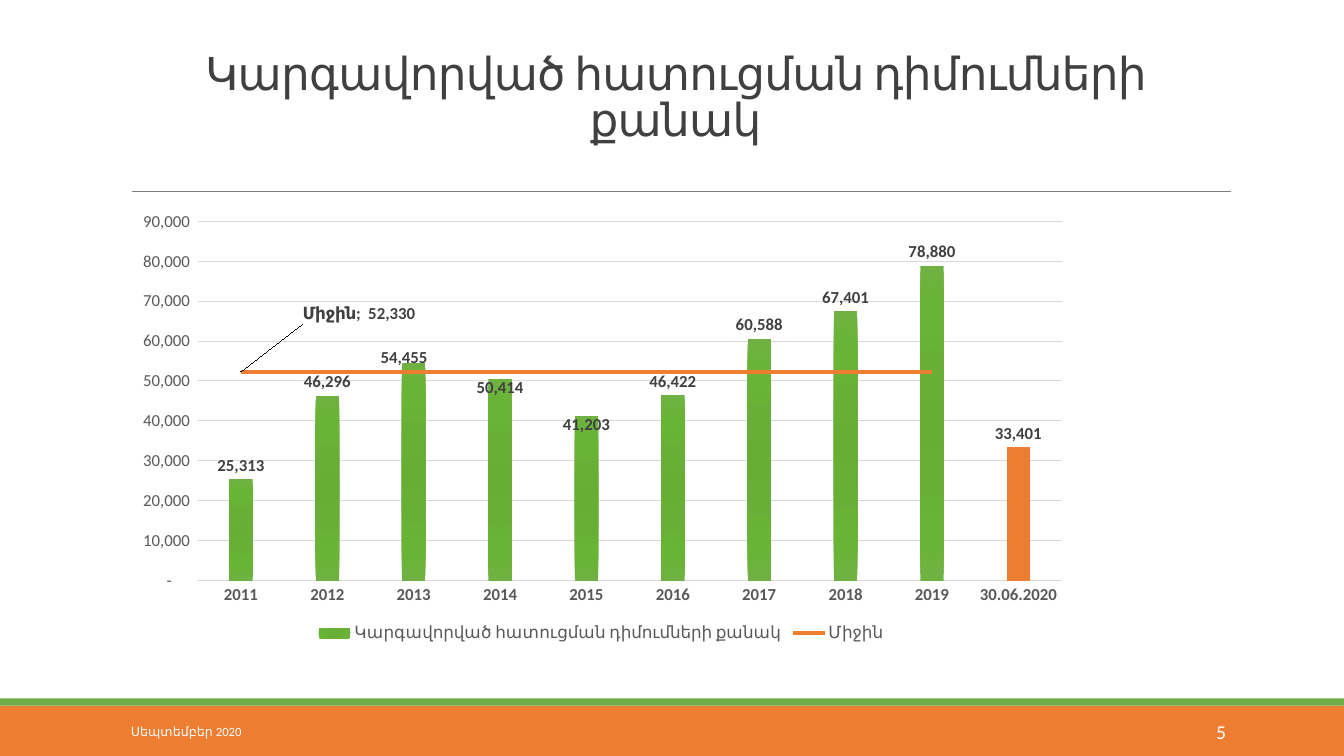
from pptx import Presentation
from pptx.chart.data import CategoryChartData
from pptx.dml.color import RGBColor
from pptx.enum.chart import XL_CHART_TYPE as ChartType, XL_LABEL_POSITION as LabelPos
from pptx.enum.chart import XL_LEGEND_POSITION as LegendPos, XL_MARKER_STYLE as Marker
from pptx.enum.chart import XL_TICK_MARK as Tick
from pptx.enum.shapes import MSO_CONNECTOR as Connector, MSO_SHAPE as Shape
from pptx.enum.text import MSO_ANCHOR as Anchor, PP_ALIGN as Align
from pptx.oxml import parse_xml
from pptx.oxml.ns import nsdecls, qn
from pptx.util import Inches, Pt

FONT = "Calibri"
GREEN, ORANGE, GREY, DARK = "70AD47", "ED7D31", "595959", "404040"
TITLE = "Կարգավորված հատուցման դիմումների քանակ"
AVERAGE_NAME, AVERAGE = "Միջին", 52330
YEARS = [str(year) for year in range(2011, 2020)]
LATEST = "30.06.2020"
COUNTS = [25313, 46296, 54455, 50414, 41203, 46422, 60588, 67401, 78880, 33401]
NUMBER = '_(* #,##0_);_(* \\(#,##0\\);_(* "-"??_);_(@_)'
BAR_STOPS = {0: "66AF34", 34: "67AF37", 70: "68B435", 100: "6FB242"}
LABEL_SHIFTS = {2: (-0.01, 0.02), 3: (0, 0.05), 4: (0, 0.05)}


def color(value):
    return RGBColor.from_string(value)


def style_font(font, size, shade, bold=False):
    for name, value in {"name": FONT, "size": Pt(size), "bold": bold}.items():
        setattr(font, name, value)
    font.color.rgb = color(shade)


def add_band(page, box, shade):
    band = page.shapes.add_shape(Shape.RECTANGLE, *map(Inches, box))
    band.shadow.inherit = False
    band.fill.solid()
    band.fill.fore_color.rgb = color(shade)
    band.line.fill.background()


def add_text(page, box, text, size, shade, align=Align.LEFT, anchor=Anchor.MIDDLE):
    frame = page.shapes.add_textbox(*map(Inches, box)).text_frame
    frame.word_wrap = True
    frame.vertical_anchor = anchor
    para = frame.paragraphs[0]
    para.alignment = align
    span = para.add_run()
    span.text = text
    style_font(span.font, size, shade)
    return para, span


def add_heading(page, box):
    left, top, width, height = box
    para, span = add_text(page, box, TITLE, 32.4, DARK, Align.CENTER, Anchor.BOTTOM)
    para.line_spacing = 0.85
    span.font._element.set("spc", "-50")
    # Rule under the title
    rule_y = Inches(top + height + 0.4)
    rule = page.shapes.add_connector(Connector.STRAIGHT, Inches(left + 0.11), rule_y,
                                     Inches(left + width + 0.01), rule_y)
    rule.line.color.rgb = color("808080")
    rule.line.width = Pt(0.5)
    rule._element.spPr.append(parse_xml(f"<a:effectLst {nsdecls('a')}/>"))


def add_footer(page, box):
    left, top, width, height = box
    add_band(page, box, ORANGE)
    add_band(page, (left, top - 0.07, width, 0.07), GREEN)
    add_text(page, (left + 1.2, top + 0.06, 2.7, 0.4), "Սեպտեմբեր 2020", 9, "FFFFFF")
    add_text(page, (left + 10.83, top + 0.06, 1.43, 0.4), "5", 14, "FFFFFF", Align.RIGHT)


def manual_layout(parts):
    inner = "".join(f'<c:{key} val="{value}"/>' for key, value in parts.items())
    return parse_xml(f"<c:layout {nsdecls('c')}><c:manualLayout>{inner}"
                     "</c:manualLayout></c:layout>")


def split_off_line(chart):
    """Move the second series to a line plot on the same axes."""
    bars = chart.plots[0]._element
    series = bars.findall(qn("c:ser"))[1]
    for flag in series.findall(qn("c:invertIfNegative")):
        series.remove(flag)
    axes = "".join(f'<c:axId val="{axis.get("val")}"/>' for axis in bars.findall(qn("c:axId")))
    line = parse_xml(f'<c:lineChart {nsdecls("c")}><c:grouping val="standard"/>'
                     f'<c:varyColors val="0"/><c:marker val="1"/>{axes}</c:lineChart>')
    line.insert(2, series)
    bars.addnext(line)


def shift_label(series, index, shift):
    """Give one point its own label, moved by shares of the chart size."""
    label = series.points[index].data_label
    style_font(label.font, 12, DARK, True)
    element = next(item for item in series.data_labels._element.findall(qn("c:dLbl"))
                   if item.find(qn("c:idx")).get("val") == str(index))
    element.insert(1, manual_layout({"x": shift[0], "y": shift[1]}))
    number = parse_xml(f"<c:numFmt {nsdecls('c')}/>")
    number.set("formatCode", NUMBER)
    number.set("sourceLinked", "0")
    element.insert(2, number)
    return label, element


def style_bars(plot):
    plot.gap_width, plot.overlap, plot.vary_by_categories = 269, -25, False
    bars = plot.series[0]
    stops = "".join(f'<a:gs pos="{place * 1000}"><a:srgbClr val="{shade}"/></a:gs>'
                    for place, shade in BAR_STOPS.items())
    edges = " ".join(f'{edge}="100000"' for edge in "ltrb")
    bars.format.fill.background()
    outline = bars._element.find(qn("c:spPr"))
    outline.replace(outline.find(qn("a:noFill")), parse_xml(
        f'<a:gradFill {nsdecls("a")}><a:gsLst>{stops}</a:gsLst>'
        f'<a:path path="circle"><a:fillToRect {edges}/></a:path></a:gradFill>'))
    latest = bars.points[len(YEARS)].format.fill
    latest.solid()
    latest.fore_color.rgb = color(ORANGE)
    labels = bars.data_labels
    style_font(labels.font, 12, DARK, True)
    for name, value in {"show_value": True, "number_format": NUMBER,
                        "number_format_is_linked": False,
                        "position": LabelPos.OUTSIDE_END}.items():
        setattr(labels, name, value)
    for index, shift in LABEL_SHIFTS.items():
        shift_label(bars, index, shift)[0].position = LabelPos.OUTSIDE_END


def style_average(series):
    series.smooth = False
    series.marker.style = Marker.NONE
    series.format.line.color.rgb = color(ORANGE)
    series.format.line.width = Pt(2.75)
    series.data_labels.show_value = False
    # Callout naming the average, with a leader line
    label, element = shift_label(series, 0, (0.06, -0.13))
    label.position = LabelPos.RIGHT
    element.insert(3, parse_xml(
        f'<c:spPr {nsdecls("c", "a")}><a:solidFill><a:srgbClr val="E2F0D9"/></a:solidFill>'
        "</c:spPr>"))
    element.find(qn("c:showSerName")).set("val", "1")
    element.find(qn("c:showBubbleSize")).addnext(
        parse_xml(f"<c:separator {nsdecls('c')}>; </c:separator>"))
    space = "http://schemas.microsoft.com/office/drawing/2012/chart"
    series.data_labels._element.append(parse_xml(
        f'<c:extLst {nsdecls("c")}><c:ext uri="{{CE6537A1-D6FC-4f65-9D91-7224C49458BB}}" '
        f'xmlns:c15="{space}"><c15:showLeaderLines val="1"/></c:ext></c:extLst>'))


def style_axes(chart):
    years, amounts = chart.category_axis, chart.value_axis
    for axis in (years, amounts):
        axis.major_tick_mark = axis.minor_tick_mark = Tick.NONE
        style_font(axis.tick_labels.font, 12, GREY, axis is years)
    years.format.line.color.rgb = color("D9D9D9")
    years.format.line.width = Pt(1)
    for name, value in {"minimum_scale": 0, "maximum_scale": 90000, "major_unit": 10000}.items():
        setattr(amounts, name, value)
    amounts.format.line.fill.background()
    amounts.major_gridlines.format.line.color.rgb = color("D9D9D9")
    amounts.major_gridlines.format.line.width = Pt(0.75)
    amounts.tick_labels.number_format = NUMBER
    amounts.tick_labels.number_format_is_linked = False


def add_claims_chart(page, box):
    data = CategoryChartData(number_format="#,##0")
    data.categories = YEARS + [LATEST]
    data.add_series(TITLE, COUNTS)
    data.add_series(AVERAGE_NAME, [AVERAGE] * len(YEARS) + [None])
    chart = page.shapes.add_chart(ChartType.COLUMN_CLUSTERED, *map(Inches, box), data).chart
    style_font(chart.font, 10, "000000")
    chart.has_title = False
    split_off_line(chart)
    style_bars(chart.plots[0])
    style_average(chart.plots[1].series[0])
    style_axes(chart)
    # Legend and plot area
    chart.has_legend = True
    chart.legend.position = LegendPos.BOTTOM
    chart.legend.include_in_layout = False
    style_font(chart.legend.font, 12, GREY)
    area = chart._chartSpace.chart.plotArea
    for old in area.findall(qn("c:layout")):
        area.remove(old)
    area.insert(0, manual_layout({"layoutTarget": "inner", "xMode": "edge", "yMode": "edge",
                                  "x": 0.08, "y": 0.04, "w": 0.9, "h": 0.81}))


def main():
    deck = Presentation()
    deck.slide_width, deck.slide_height = Inches(13.33), Inches(7.5)
    page = deck.slides.add_slide(deck.slide_layouts[6])
    add_footer(page, (0, 7, 13.33, 0.5))
    add_heading(page, (1.2, 0.72, 11, 0.78))
    add_claims_chart(page, (1.2, 2.02, 9.52, 4.4))
    deck.save("out.pptx")


if __name__ == "__main__":
    main()
